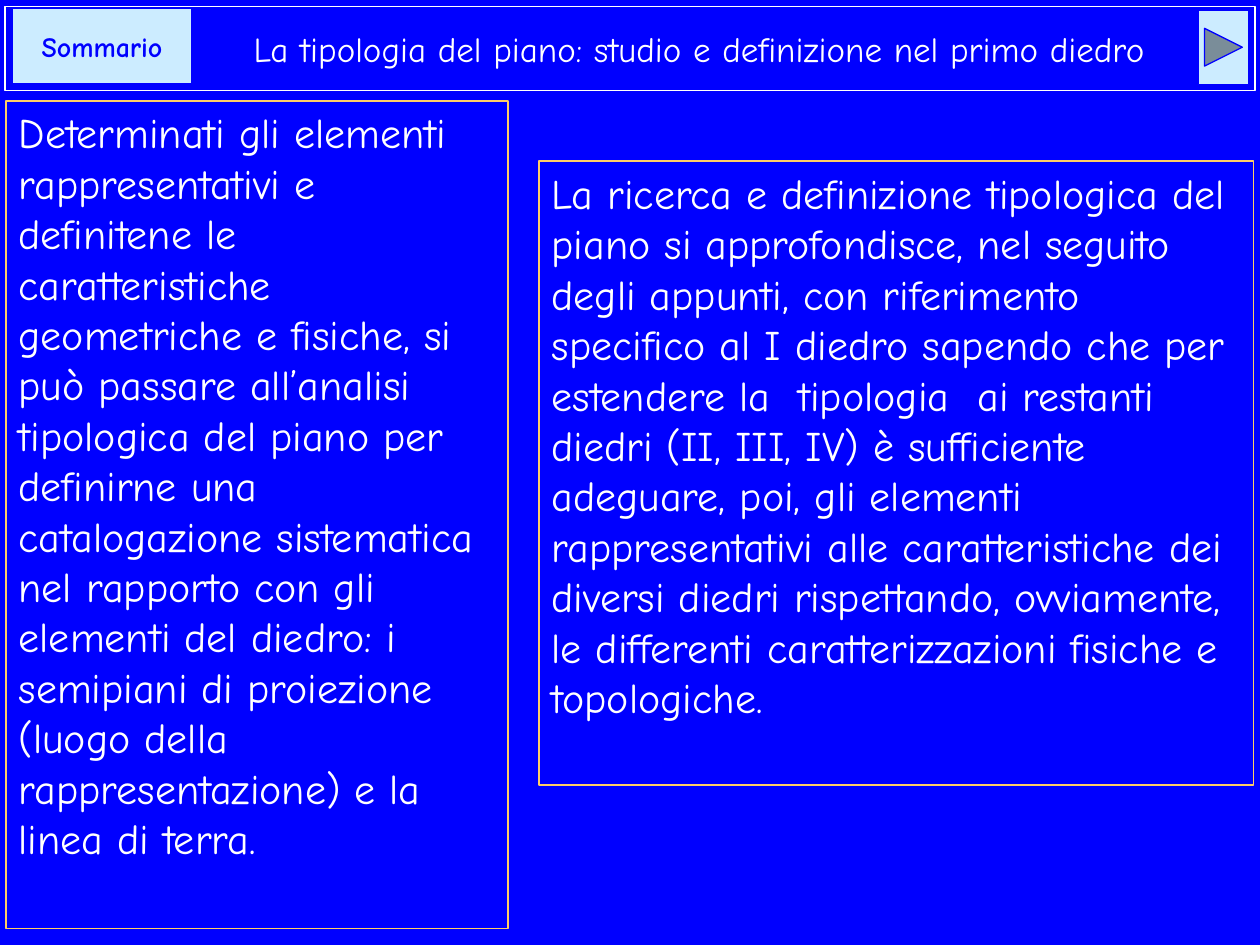
import pptx
import pptx.dml.color
import pptx.enum.shapes
import pptx.enum.text
import pptx.util

Inches = pptx.util.Inches
Pt = pptx.util.Pt
Shapes = pptx.enum.shapes.MSO_SHAPE
Align = pptx.enum.text.PP_ALIGN
Anchor = pptx.enum.text.MSO_ANCHOR

COLORS = {"blue": "0000FF", "white": "FFFFFF", "gold": "FFCC66", "sky": "CCECFF"}
FONT = "Comic Neue"

TITLE = "La tipologia del piano: studio e definizione nel primo diedro"
ANALYSIS = (
    "Determinati gli elementi rappresentativi e definitene le caratteristiche "
    "geometriche e fisiche, si può passare all’analisi tipologica del piano per "
    "definirne una catalogazione sistematica nel rapporto con gli elementi del "
    "diedro: i semipiani di proiezione (luogo della rappresentazione) e la linea "
    "di terra."
)
RESEARCH = (
    "La ricerca e definizione tipologica del piano si approfondisce, nel seguito "
    "degli appunti, con riferimento  specifico al I diedro sapendo che per "
    "estendere la  tipologia  ai restanti diedri (II, III, IV) è sufficiente "
    "adeguare, poi, gli elementi rappresentativi alle caratteristiche dei diversi "
    "diedri rispettando, ovviamente, le differenti caratterizzazioni fisiche e "
    "topologiche."
)


def rgb(name):
    return pptx.dml.color.RGBColor.from_string(COLORS[name])


class LessonSlide:
    """Holds the slide being built and its shared text and outline style."""

    def __init__(self, presentation):
        self.slide = presentation.slides.add_slide(presentation.slide_layouts[6])
        background = self.slide.background.fill
        background.solid()
        background.fore_color.rgb = rgb("blue")

    def add_text(self, shape, text, size, color="white", align=Align.LEFT,
                 anchor=Anchor.TOP, bold=False):
        frame = shape.text_frame
        frame.word_wrap = True
        frame.vertical_anchor = anchor
        paragraph = frame.paragraphs[0]
        paragraph.alignment = align
        run = paragraph.add_run()
        run.text = text
        run.font.name = FONT
        run.font.size = Pt(size)
        run.font.bold = bold
        run.font.color.rgb = rgb(color)

    def framed_text(self, box, text, size, outline, width, **style):
        frame = self.slide.shapes.add_textbox(*map(Inches, box))
        frame.line.color.rgb = rgb(outline)
        frame.line.width = Pt(width)
        self.add_text(frame, text, size, **style)
        return frame

    def button(self, kind, box):
        button = self.slide.shapes.add_shape(kind, *map(Inches, box))
        button.shadow.inherit = False
        button.fill.solid()
        button.fill.fore_color.rgb = rgb("sky")
        button.line.color.rgb = rgb("blue")
        button.line.width = Pt(0)
        return button


def main():
    presentation = pptx.Presentation()
    presentation.slide_width = Inches(10)
    presentation.slide_height = Inches(7.5)
    lesson = LessonSlide(presentation)

    title = lesson.framed_text((0.04, 0.05, 9.92, 0.67), TITLE, 20, "white", 0.75,
                               align=Align.CENTER, anchor=Anchor.MIDDLE)
    title.text_frame.margin_left = Inches(1.2)  # clears the summary button

    lesson.framed_text((0.05, 0.8, 3.98, 6.57), ANALYSIS, 24, "gold", 1)
    lesson.framed_text((4.28, 1.28, 5.67, 4.95), RESEARCH, 24, "gold", 1)

    summary = lesson.button(Shapes.ACTION_BUTTON_CUSTOM, (0.1, 0.07, 1.42, 0.59))
    lesson.add_text(summary, "Sommario", 16, color="blue", align=Align.CENTER,
                    anchor=Anchor.MIDDLE, bold=True)
    lesson.button(Shapes.ACTION_BUTTON_FORWARD_OR_NEXT, (9.51, 0.08, 0.4, 0.59))

    presentation.save("out.pptx")


if __name__ == "__main__":
    main()
